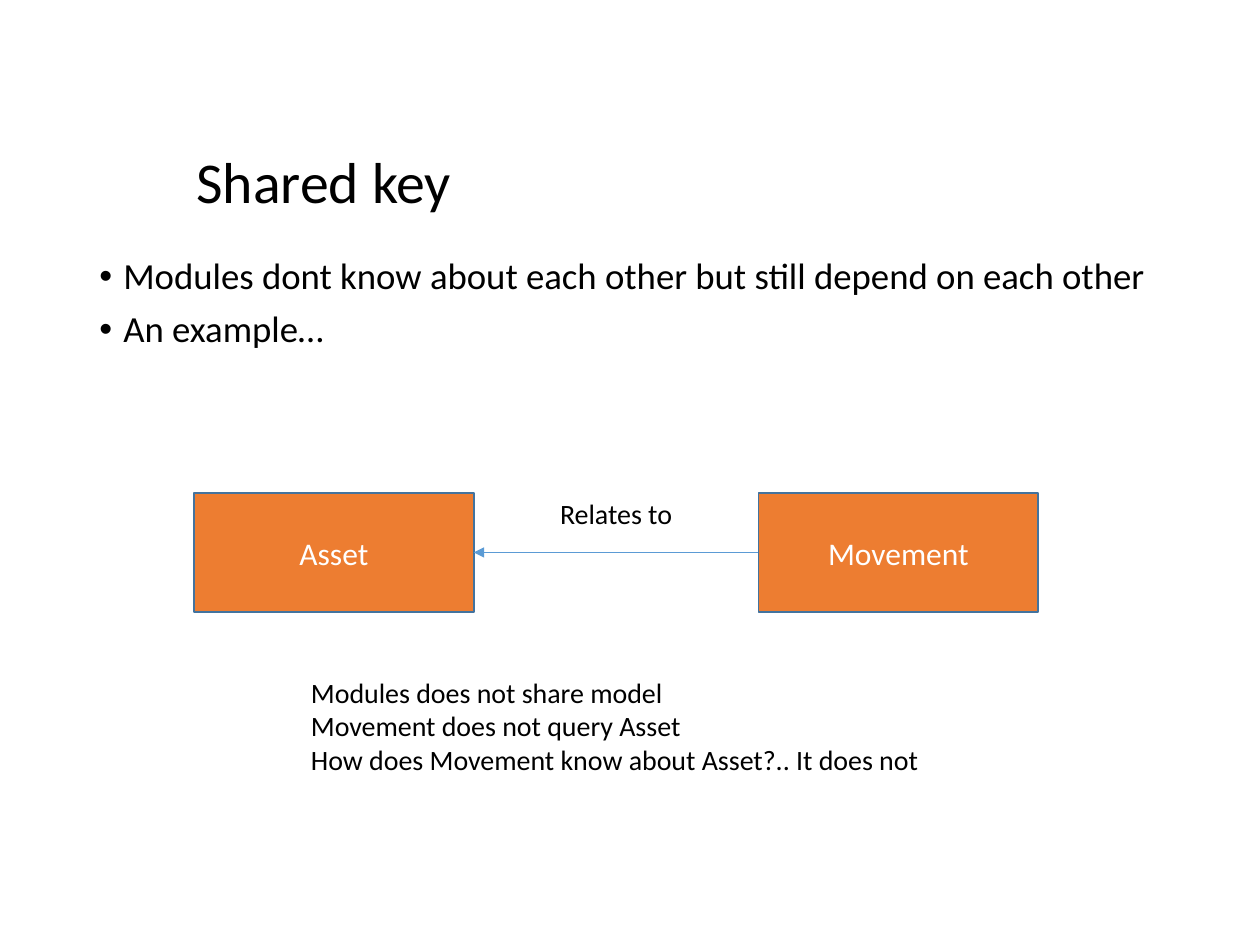
from lxml.etree import SubElement as Sub
from pptx import Presentation
from pptx.dml.color import RGBColor as Rgb
from pptx.enum.shapes import MSO_CONNECTOR as Conn, MSO_SHAPE as Shape
from pptx.enum.text import MSO_ANCHOR as Anchor, PP_ALIGN as Align
from pptx.oxml.ns import qn
from pptx.util import Inches, Pt

FONT = "Calibri"
COLORS = {
    "text": "000000",
    "label": "FFFFFF",
    "box": "ED7D31",
    "edge": "43739E",
    "arrow": "5B9BD5",
}


def color(name):
    return Rgb.from_string(COLORS[name])


def style(para, size, name="text"):
    para.font.name = FONT
    para.font.size = Pt(size)
    para.font.color.rgb = color(name)


def add_bullet(para):
    props = para._p.get_or_add_pPr()
    props.set("marL", str(Inches(0.19)))
    props.set("indent", str(Inches(-0.19)))
    Sub(props, qn("a:buFont")).set("typeface", "Arial")
    Sub(props, qn("a:buChar")).set("char", "•")


def add_text(slide, area, lines, size, wrap=True, bullets=False,
             align=None, anchor=Anchor.TOP, spacing=None, gap=0):
    box = slide.shapes.add_textbox(*map(Inches, area))
    frame = box.text_frame
    frame.word_wrap = wrap
    frame.vertical_anchor = anchor
    frame.text = "\n".join(lines)
    for i, para in enumerate(frame.paragraphs):
        if bullets:
            add_bullet(para)
        para.alignment = align
        para.line_spacing = spacing
        if i and gap:
            para.space_before = Pt(gap)
        style(para, size)


def add_box(slide, left, label):
    box = slide.shapes.add_shape(
        Shape.RECTANGLE, Inches(left), Inches(3.91), Inches(2.22), Inches(0.95))
    box.shadow.inherit = False
    box.fill.solid()
    box.fill.fore_color.rgb = color("box")
    box.line.color.rgb = color("edge")
    box.line.width = Pt(1)
    frame = box.text_frame
    frame.text = label
    frame.vertical_anchor = Anchor.MIDDLE
    para = frame.paragraphs[0]
    para.alignment = Align.CENTER
    style(para, 18, "label")
    return box


def add_arrow(slide, start, end):
    # From the left side of start to the right side of end
    line = slide.shapes.add_connector(Conn.STRAIGHT, 0, 0, 0, 0)
    line.begin_connect(start, 1)
    line.end_connect(end, 3)
    line.line.color.rgb = color("arrow")
    line.line.width = Pt(0.5)
    Sub(line.line._get_or_add_ln(), qn("a:tailEnd")).set("type", "triangle")
    Sub(line._element.spPr, qn("a:effectLst"))


def main():
    deck = Presentation()
    deck.slide_width, deck.slide_height = Inches(10), Inches(7.5)
    slide = deck.slides.add_slide(deck.slide_layouts[6])

    # Title and bullets
    add_text(slide, (1.46, 0.84, 6.55, 1.25), ["Shared key"], 33,
             anchor=Anchor.MIDDLE, spacing=0.9)
    add_text(slide, (0.69, 2, 8.62, 0.89), [
        "Modules dont know about each other but still depend on each other",
        "An example…",
    ], 21, bullets=True, spacing=0.9, gap=7.5)

    # Diagram: Movement relates to Asset
    asset = add_box(slide, 1.54, "Asset")
    move = add_box(slide, 6.02, "Movement")
    add_arrow(slide, move, asset)
    add_text(slide, (4.34, 3.89, 1.1, 0.37), ["Relates to"], 16,
             wrap=False, align=Align.CENTER)

    # Remarks
    add_text(slide, (2.37, 5.31, 6.14, 0.91), [
        "Modules does not share model",
        "Movement does not query Asset",
        "How does Movement know about Asset?.. It does not",
    ], 16)

    deck.save("out.pptx")


if __name__ == "__main__":
    main()
